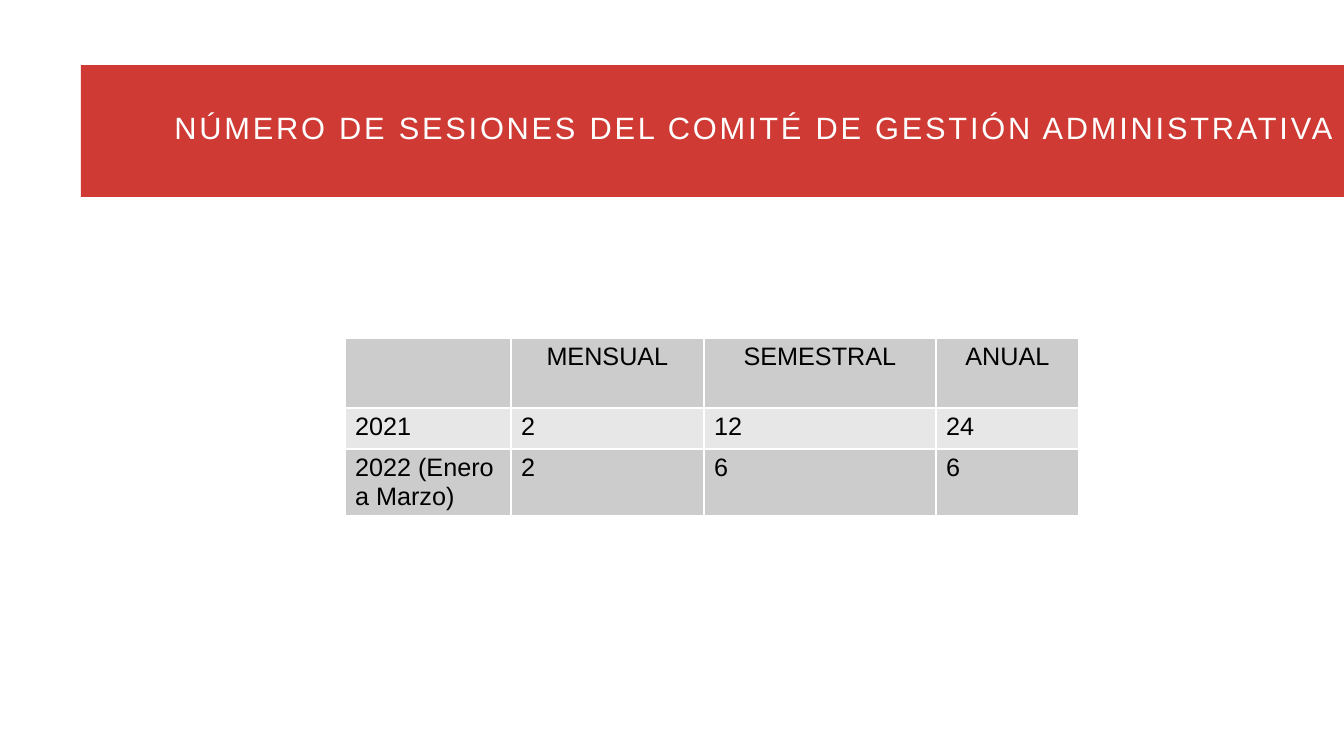
from dataclasses import dataclass

from lxml import etree
from pptx import Presentation
from pptx.dml.color import RGBColor
from pptx.enum.text import MSO_ANCHOR, MSO_AUTO_SIZE, PP_ALIGN
from pptx.oxml.ns import qn
from pptx.util import Pt

CENTER, LEFT, RIGHT = PP_ALIGN.CENTER, PP_ALIGN.LEFT, PP_ALIGN.RIGHT
MIDDLE = MSO_ANCHOR.MIDDLE
NO_AUTOFIT = MSO_AUTO_SIZE.NONE
TITLE_ONLY = 5
EMU_PER_INCH, PX_PER_INCH = 914400, 100.8
SLIDE_W, SLIDE_H = 1344, 756


@dataclass(frozen=True)
class Theme:
    font: str = "Arial"
    banner: str = "CF3A34"
    light: str = "FFFFFF"
    dark: str = "000000"
    bands: tuple = ("CCCCCC", "E7E7E7")
    title_size: int = 22
    table_size: int = 18
    title_spacing: int = 2
    border: int = 1


THEME = Theme()

TITLE = "NÚMERO DE SESIONES DEL COMITÉ DE GESTIÓN ADMINISTRATIVA"
SESSIONS = [
    ["", "MENSUAL", "SEMESTRAL", "ANUAL"],
    ["2021", "2", "12", "24"],
    ["2022 (Enero a Marzo)", "2", "6", "6"],
]
COLUMN_WIDTHS = [166, 193, 232, 143]
ROW_HEIGHTS = [70, 41, 66]


def px(length):
    return round(length * EMU_PER_INCH / PX_PER_INCH)


def paint(fill, color):
    fill.solid()
    fill.fore_color.rgb = RGBColor.from_string(color)


def style_text(paragraph, size, color, alignment):
    paragraph.alignment = alignment
    paragraph.font.name = THEME.font
    paragraph.font.size = Pt(size)
    paragraph.font.color.rgb = RGBColor.from_string(color)


def add_borders(cell):
    # Border lines must come before the fill in the cell properties
    properties = cell._tc.get_or_add_tcPr()
    for index, side in enumerate(("lnL", "lnR", "lnT", "lnB")):
        line = etree.Element(qn(f"a:{side}"), w=str(Pt(THEME.border)))
        solid = etree.SubElement(line, qn("a:solidFill"))
        etree.SubElement(solid, qn("a:srgbClr"), val=THEME.light)
        properties.insert(index, line)


def build_title(slide, left, top, width, height):
    banner = slide.shapes.title
    banner.left, banner.top = px(left), px(top)
    banner.width, banner.height = px(width), px(height)
    paint(banner.fill, THEME.banner)
    banner.line.fill.background()

    frame = banner.text_frame
    frame.text = TITLE
    frame.word_wrap = True
    frame.auto_size = NO_AUTOFIT
    frame.vertical_anchor = MIDDLE
    heading = frame.paragraphs[0]
    heading.line_spacing = 0.8
    style_text(heading, THEME.title_size, THEME.light, RIGHT)
    letter_spacing = str(THEME.title_spacing * 100)
    heading.runs[0]._r.get_or_add_rPr().set("spc", letter_spacing)


def build_sessions_table(slide, left, top, width, height):
    table = slide.shapes.add_table(
        len(SESSIONS), len(COLUMN_WIDTHS),
        px(left), px(top), px(width), px(height)).table
    table.first_row = table.horz_banding = False
    for column, share in zip(table.columns, COLUMN_WIDTHS):
        column.width = px(width * share / sum(COLUMN_WIDTHS))
    for row, share in zip(table.rows, ROW_HEIGHTS):
        row.height = px(height * share / sum(ROW_HEIGHTS))

    # Header is centred; row fills alternate
    for row_index, values in enumerate(SESSIONS):
        alignment = LEFT if row_index else CENTER
        for column_index, value in enumerate(values):
            cell = table.cell(row_index, column_index)
            cell.text = value
            paint(cell.fill, THEME.bands[row_index % 2])
            add_borders(cell)
            style_text(cell.text_frame.paragraphs[0],
                       THEME.table_size, THEME.dark, alignment)


def main():
    deck = Presentation()
    deck.slide_width, deck.slide_height = px(SLIDE_W), px(SLIDE_H)
    slide = deck.slides.add_slide(deck.slide_layouts[TITLE_ONLY])
    paint(slide.background.fill, THEME.light)
    build_title(slide, 81, 65, SLIDE_W - 81, 132)
    build_sessions_table(slide, 345, 338, sum(COLUMN_WIDTHS), sum(ROW_HEIGHTS))
    deck.save("out.pptx")


if __name__ == "__main__":
    main()
